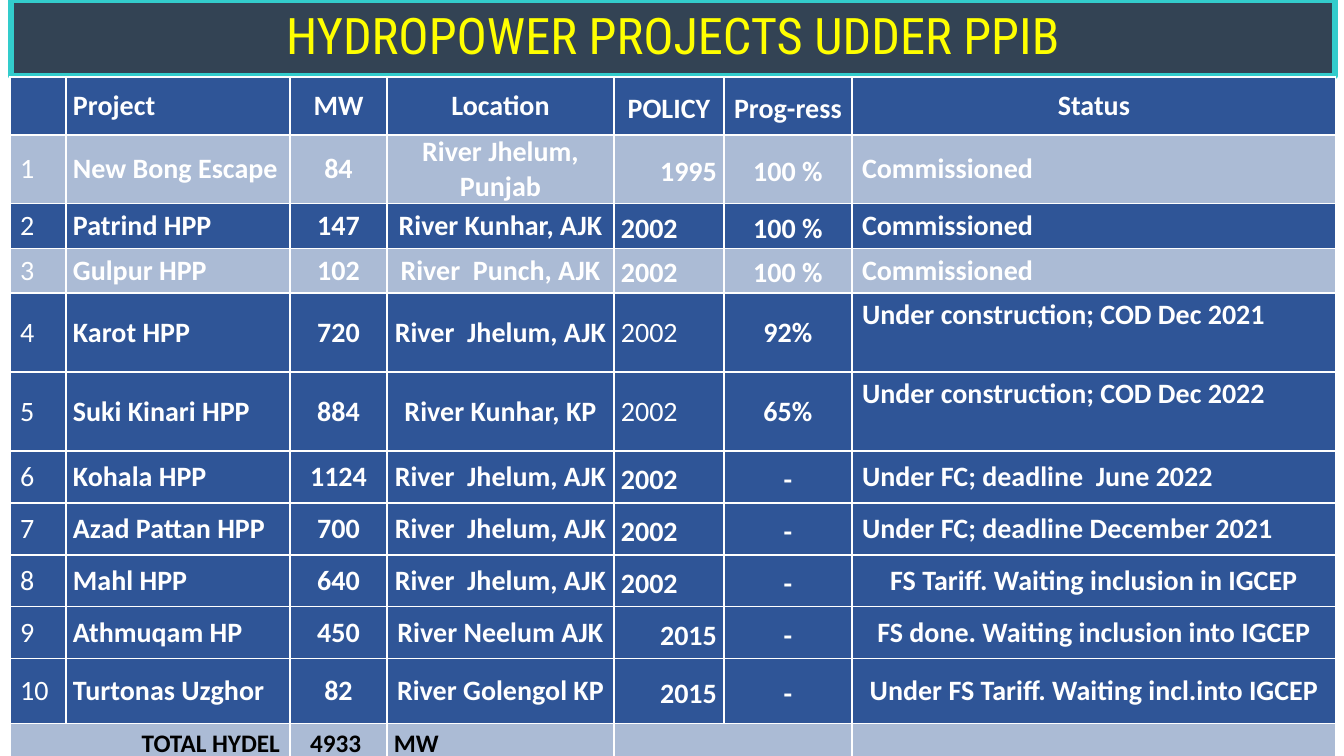
from lxml.etree import SubElement
from pptx import Presentation
from pptx.dml.color import RGBColor
from pptx.enum.text import MSO_ANCHOR, PP_ALIGN
from pptx.oxml.ns import qn
from pptx.util import Emu, Pt

PIXEL = 9071  # EMU
NAVY = RGBColor(0x00, 0x15, 0x2A)
TEAL = RGBColor(0x33, 0xCC, 0xCC)
YELLOW = RGBColor(0xFF, 0xFF, 0x00)
BLUE = RGBColor(0x2F, 0x55, 0x97)
WHITE = RGBColor(0xFF, 0xFF, 0xFF)
BLACK = RGBColor(0x00, 0x00, 0x00)
LEFT, CENTER, RIGHT = PP_ALIGN.LEFT, PP_ALIGN.CENTER, PP_ALIGN.RIGHT

COLUMN_WIDTHS = [56, 224, 97, 227, 110, 128, 484]
ROW_HEIGHTS = [58, 68, 45, 44, 79, 79, 52, 52, 52, 52, 65, 36]
NUMBER, PROJECT, CAPACITY, LOCATION, POLICY, PROGRESS, STATUS = range(7)
ALIGNMENTS = [LEFT, LEFT, CENTER, CENTER, LEFT, CENTER, LEFT]
HEADER = ["", "Project", "MW", "Location", "POLICY", "Prog-ress", "Status"]
PROJECTS = [
    ["1", "New Bong Escape", "84", "River Jhelum, Punjab", "1995", "100 %", "Commissioned"],
    ["2", "Patrind HPP", "147", "River Kunhar, AJK", "2002", "100 %", "Commissioned"],
    ["3", "Gulpur HPP", "102", "River  Punch, AJK", "2002", "100 %", "Commissioned"],
    ["4", "Karot HPP", "720", "River  Jhelum, AJK", "2002", "92%",
     "Under construction; COD Dec 2021"],
    ["5", "Suki Kinari HPP", "884", "River Kunhar, KP", "2002", "65%",
     "Under construction; COD Dec 2022"],
    ["6", "Kohala HPP", "1124", "River  Jhelum, AJK", "2002", "-",
     "Under FC; deadline  June 2022"],
    ["7", "Azad Pattan HPP", "700", "River  Jhelum, AJK", "2002", "-",
     "Under FC; deadline December 2021"],
    ["8", "Mahl HPP", "640", "River  Jhelum, AJK", "2002", "-",
     "FS Tariff. Waiting inclusion in IGCEP"],
    ["9", "Athmuqam HP", "450", "River Neelum AJK", "2015", "-",
     "FS done. Waiting inclusion into IGCEP"],
    ["10", "Turtonas Uzghor", "82", "River Golengol KP", "2015", "-",
     "Under FS Tariff. Waiting incl.into IGCEP"],
]
TOTAL = ["TOTAL HYDEL", "", "4933 ", "MW", "", "", ""]
TOTAL_ROW = len(PROJECTS) + 1
LIGHT_ROWS = (1, 3, TOTAL_ROW)
CONSTRUCTION_ROWS = (4, 5)
TARIFF_ROWS = (8, 9, 10)


def px(length):
    return Emu(length * PIXEL)


def set_fill(fill, color, opacity=100):
    fill.solid()
    fill.fore_color.rgb = color
    if opacity < 100:
        color_element = fill._xPr.find(qn("a:solidFill"))[0]
        SubElement(color_element, qn("a:alpha"), val=str(opacity * 1000))


def set_font(paragraph, name, size, color, bold):
    for run in paragraph.runs:
        run.font.name = name
        run.font.size = Pt(size)
        run.font.color.rgb = color
        run.font.bold = bold


def add_title(slide, left, top, width, height):
    title = slide.shapes.title
    title.left, title.top, title.width, title.height = map(px, (left, top, width, height))
    set_fill(title.fill, NAVY, 80)
    title.line.color.rgb = TEAL
    title.line.width = Pt(4.5)
    title.text_frame.text = "HYDROPOWER PROJECTS UDDER PPIB"
    title.text_frame.vertical_anchor = MSO_ANCHOR.MIDDLE
    paragraph = title.text_frame.paragraphs[0]
    paragraph.alignment = CENTER
    paragraph.line_spacing = 0.9
    set_font(paragraph, "Roboto Condensed", 36, YELLOW, False)


def cell_alignment(row, column, text):
    if row == TOTAL_ROW:
        return {NUMBER: RIGHT, CAPACITY: CENTER}.get(column, LEFT)
    if row == 0:
        return LEFT if column == PROJECT else CENTER
    if column == POLICY and text != "2002":
        return RIGHT
    if column == STATUS and row in TARIFF_ROWS:
        return CENTER
    return ALIGNMENTS[column]


def fill_cell(cell, row, column, text):
    set_fill(cell.fill, BLUE, 40 if row in LIGHT_ROWS else 100)
    cell.vertical_anchor = MSO_ANCHOR.MIDDLE
    if PROJECT <= column <= PROGRESS:
        cell.margin_left = cell.margin_right = px(7)
        cell.margin_top = cell.margin_bottom = 0
    if column == STATUS and row in CONSTRUCTION_ROWS:
        cell.vertical_anchor = MSO_ANCHOR.TOP
    cell.text_frame.text = text
    paragraph = cell.text_frame.paragraphs[0]
    paragraph.alignment = cell_alignment(row, column, text)
    if column in (POLICY, PROGRESS) and row not in CONSTRUCTION_ROWS:
        paragraph.line_spacing = 1.15
    is_total = row == TOTAL_ROW
    regular = column == NUMBER or (column == POLICY and row in CONSTRUCTION_ROWS)
    set_font(paragraph, "Calibri", 18 if is_total else 20,
             BLACK if is_total else WHITE, is_total or not regular)


def add_project_table(slide, left, top):
    rows = [HEADER, *PROJECTS, TOTAL]
    frame = slide.shapes.add_table(len(rows), len(HEADER), px(left), px(top),
                                   px(sum(COLUMN_WIDTHS)), px(sum(ROW_HEIGHTS)))
    table = frame.table
    for column, width in zip(table.columns, COLUMN_WIDTHS):
        column.width = px(width)
    for row, height in zip(table.rows, ROW_HEIGHTS):
        row.height = px(height)
    for row, texts in enumerate(rows):
        for column, text in enumerate(texts):
            fill_cell(table.cell(row, column), row, column, text)
    # Total row: label and the empty policy and progress cells
    for first in (NUMBER, POLICY):
        table.cell(TOTAL_ROW, first).merge(table.cell(TOTAL_ROW, first + 1))


def main():
    presentation = Presentation()
    presentation.slide_width, presentation.slide_height = px(1344), px(756)
    slide = presentation.slides.add_slide(presentation.slide_layouts[5])
    add_title(slide, 11, 0, 1324, 76)
    add_project_table(slide, 10, 77)
    presentation.save("out.pptx")


if __name__ == "__main__":
    main()
